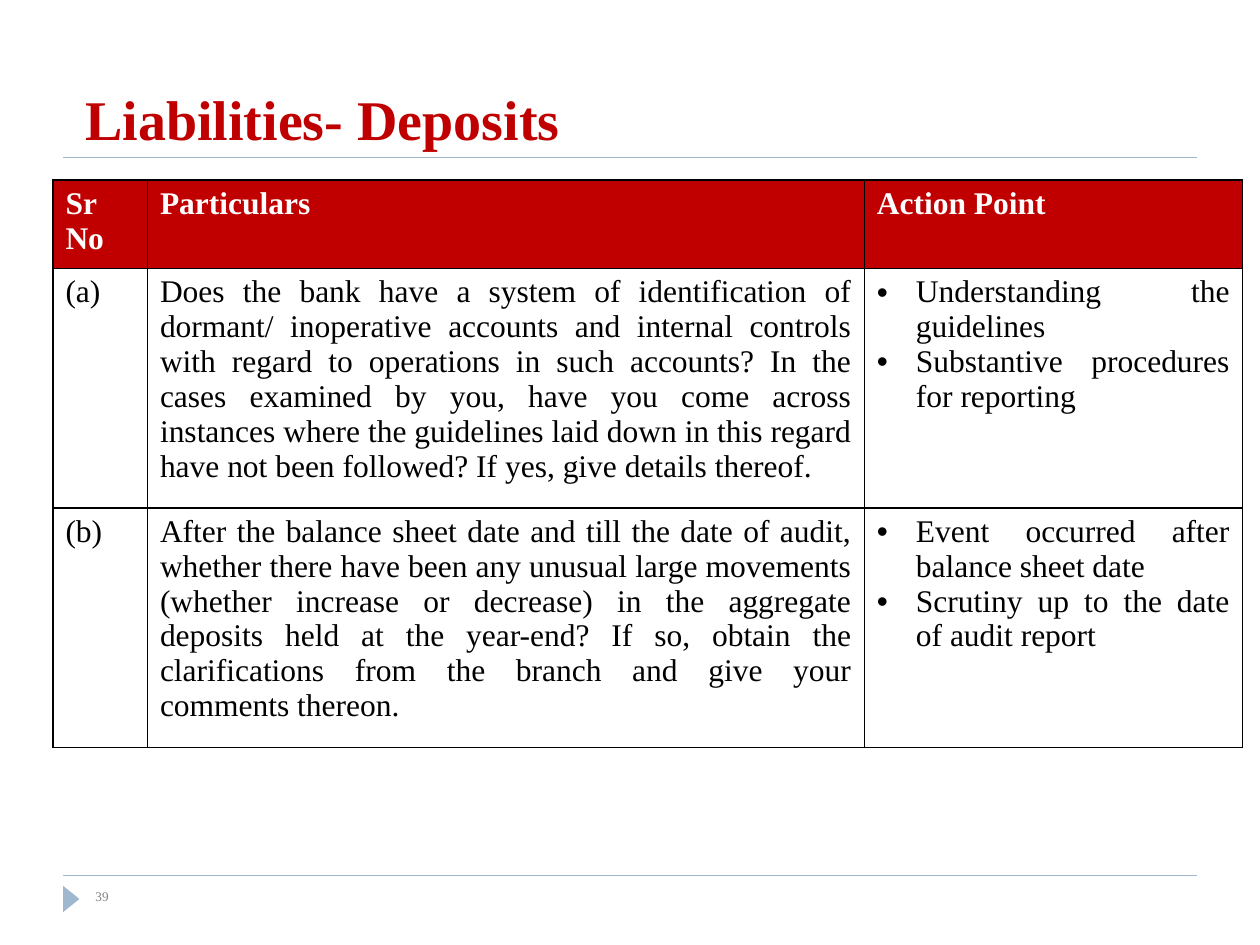
from lxml.etree import SubElement
from pptx import Presentation
from pptx.dml.color import RGBColor
from pptx.enum.shapes import MSO_CONNECTOR, MSO_SHAPE
from pptx.enum.text import MSO_ANCHOR, PP_ALIGN
from pptx.oxml.ns import qn
from pptx.util import Inches, Pt

COLORS = {"red": "C00000", "rule": "9FB8CD", "gray": "808080",
          "black": "000000", "white": "FFFFFF"}
FONT = "Times New Roman"
WIDTH, HEIGHT = 10, 7.5
MARGIN = 0.05 * WIDTH
COLUMNS = [0.75, 5.69, 3]
ROWS = [0.65, 1.75, 1.75]
HEADER = ["Sr No", "Particulars", "Action Point"]
QUESTIONS = [
    ("(a)",
     "Does the bank have a system of identification of dormant/ inoperative "
     "accounts and internal controls with regard to operations in such accounts? "
     "In the cases examined by you, have you come across instances where the "
     "guidelines laid down in this regard have not been followed? If yes, give "
     "details thereof.",
     ["Understanding the guidelines", "Substantive procedures for reporting"]),
    ("(b)",
     "After the balance sheet date and till the date of audit, whether there have "
     "been any unusual large movements (whether increase or decrease) in the "
     "aggregate deposits held at the year-end? If so, obtain the clarifications "
     "from the branch and give your comments thereon.",
     ["Event occurred after balance sheet date",
      "Scrutiny up to the date of audit report"]),
]


def rgb(name):
    """Return the named colour."""
    return RGBColor.from_string(COLORS[name])


def write(p, text, size=18, color="black", bold=False, align=PP_ALIGN.LEFT):
    """Write formatted text into a paragraph."""
    p.alignment = align
    r = p.add_run()
    r.text = text
    r.font.name, r.font.size, r.font.bold = FONT, Pt(size), bold
    r.font.color.rgb = rgb(color)


def add_text(s, text, left, top, width, height, anchor=MSO_ANCHOR.TOP, **style):
    """Add a wrapped text box."""
    tf = s.shapes.add_textbox(*map(Inches, (left, top, width, height))).text_frame
    tf.word_wrap = True
    tf.vertical_anchor = anchor
    write(tf.paragraphs[0], text, **style)


def add_rule(s, y):
    """Add a horizontal rule between the side margins."""
    line = s.shapes.add_connector(MSO_CONNECTOR.STRAIGHT, Inches(MARGIN), Inches(y),
                                  Inches(WIDTH - MARGIN), Inches(y))
    line.line.color.rgb = rgb("rule")
    line.line.width = Pt(0.75)
    SubElement(line._element.spPr, qn("a:effectLst"))


def add_marker(s):
    """Add the triangle beside the page number."""
    sp = s.shapes.add_shape(MSO_SHAPE.ISOSCELES_TRIANGLE, Inches(0.46), Inches(7.07),
                            Inches(0.21), Inches(0.13))
    sp.rotation = 90
    sp.shadow.inherit = False
    sp.fill.solid()
    sp.fill.fore_color.rgb = rgb("rule")
    sp.line.fill.background()


def add_bullet(p):
    """Give a paragraph a hanging bullet."""
    pPr = p._p.get_or_add_pPr()
    pPr.set("marL", str(Inches(0.31)))
    pPr.set("indent", str(-Inches(0.31)))
    SubElement(pPr, qn("a:buFont"), typeface="Arial")
    SubElement(pPr, qn("a:buChar"), char="•")


def add_borders(cell):
    """Draw all four borders of a cell."""
    tcPr = cell._tc.get_or_add_tcPr()
    for i, side in enumerate(("lnL", "lnR", "lnT", "lnB")):
        ln = tcPr.makeelement(qn(f"a:{side}"), {"w": str(Pt(1))})
        fill = SubElement(ln, qn("a:solidFill"))
        SubElement(fill, qn("a:srgbClr"), val=COLORS["black"])
        tcPr.insert(i, ln)


def fill_cell(cell, content, fill="white", **style):
    """Fill a cell with one paragraph or a bulleted list."""
    cell.fill.solid()
    cell.fill.fore_color.rgb = rgb(fill)
    add_borders(cell)
    bulleted = isinstance(content, list)
    tf = cell.text_frame
    for i, text in enumerate(content if bulleted else [content]):
        p = tf.add_paragraph() if i else tf.paragraphs[0]
        write(p, text, align=PP_ALIGN.JUSTIFY, **style)
        if bulleted:
            add_bullet(p)


def add_audit_table(s, left, top):
    """Add the table of audit questions and action points."""
    table = s.shapes.add_table(len(ROWS), len(COLUMNS), Inches(left), Inches(top),
                               Inches(sum(COLUMNS)), Inches(sum(ROWS))).table
    for column, width in zip(table.columns, COLUMNS):
        column.width = Inches(width)
    for row, height in zip(table.rows, ROWS):
        row.height = Inches(height)
    for i, contents in enumerate([HEADER, *QUESTIONS]):
        style = {} if i else {"fill": "red", "color": "white", "bold": True}
        for j, content in enumerate(contents):
            fill_cell(table.cell(i, j), content, **style)


def main():
    """Build and save the slide."""
    prs = Presentation()
    prs.slide_width, prs.slide_height = Inches(WIDTH), Inches(HEIGHT)
    s = prs.slides.add_slide(prs.slide_layouts[6])
    for y in (6.95, HEIGHT / 6):
        add_rule(s, y)
    add_marker(s)
    add_text(s, "Liabilities- Deposits", 0.58, 0.17, 9, 1.08,
             anchor=MSO_ANCHOR.BOTTOM, size=32, color="red", bold=True)
    add_text(s, "39", 0.66, 7, 4.33, 0.3, size=7.5, color="gray")
    add_audit_table(s, 0.42, 1.43)
    prs.save("out.pptx")


if __name__ == "__main__":
    main()
